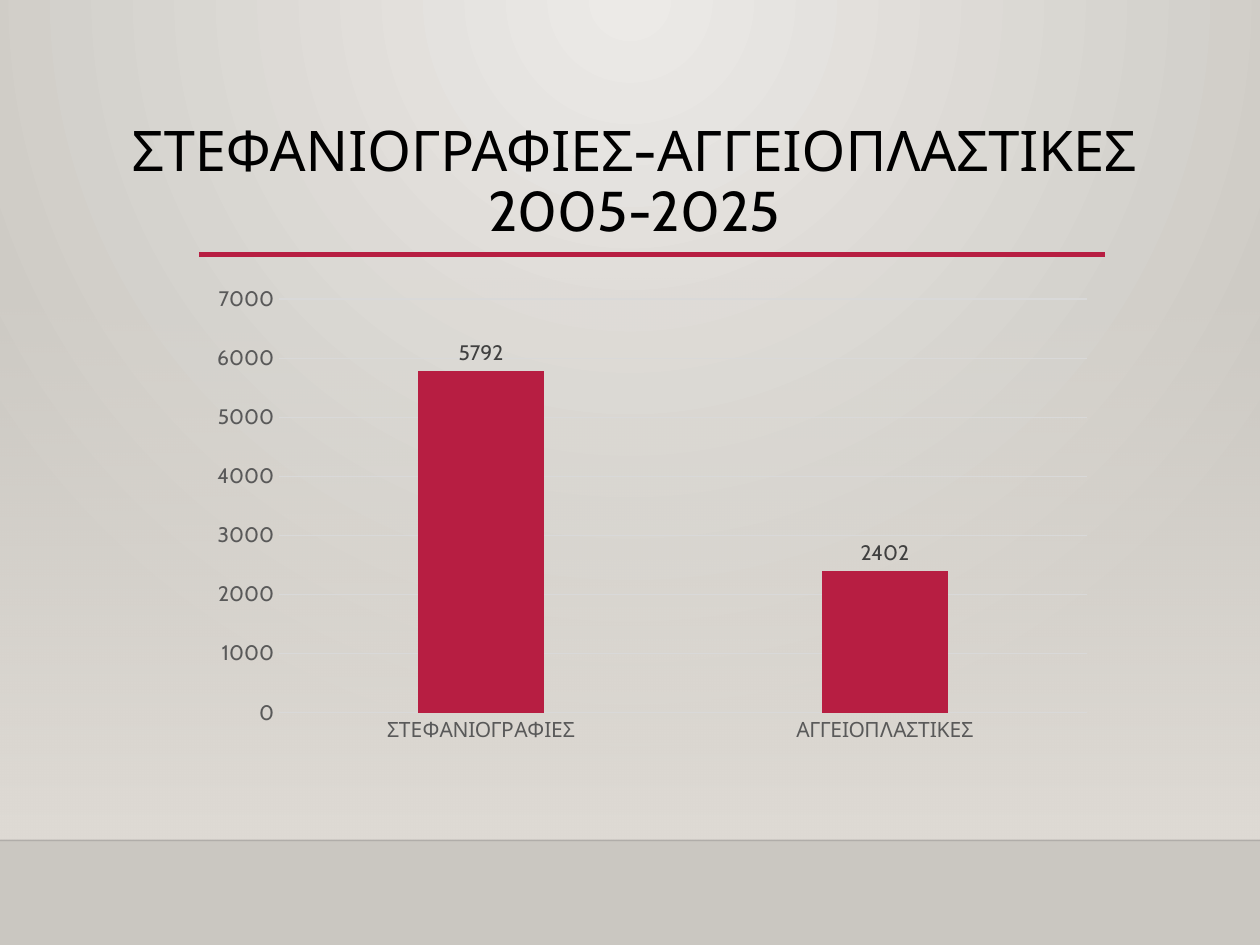
from dataclasses import dataclass
from typing import Optional

import lxml.etree
import pptx
import pptx.chart.data
import pptx.dml.color
import pptx.enum.chart
import pptx.enum.shapes
import pptx.enum.text
import pptx.oxml
import pptx.oxml.ns
import pptx.util

WIDTH, HEIGHT = 10, 7.5
FONT = "Cabin"
CRIMSON, GRID_GREY, AXIS_GREY, LABEL_GREY = "B71E42", "D9D9D9", "595959", "404040"
SAND = "DFDBD5"
# Shared layout: content column and the floor under the wall
LEFT, CONTENT_WIDTH = 1.58, 7.19
WALL_TOP, FLOOR_TOP, RULE_TOP = 2.2, 6.67, 2.02


@dataclass
class Stop:
    position: int
    color: str
    opacity: int = 100


@dataclass
class Rule:
    left: float
    top: float
    width: float
    color: str
    weight: float
    opacity: Optional[int] = None


RULES = [
    Rule(0, FLOOR_TOP, WIDTH, "000001", 1, 20),
    Rule(LEFT, RULE_TOP, CONTENT_WIDTH, CRIMSON, 2.5),
]


def rgb(color: str) -> pptx.dml.color.RGBColor:
    return pptx.dml.color.RGBColor.from_string(color)


def box(*lengths: float) -> list:
    return [pptx.util.Inches(length) for length in lengths]


def add_child(parent, tag: str, **attributes: str):
    child = lxml.etree.SubElement(parent, pptx.oxml.ns.qn(tag))
    for name, value in attributes.items():
        child.set(name, value)
    return child


def set_gradient(fill, owner, stops: list[Stop]):
    """Fill with the given stops; return the gradient element for its direction."""
    fill.gradient()
    gradient = owner.find(".//" + pptx.oxml.ns.qn("a:gradFill"))
    for child in list(gradient):
        gradient.remove(child)
    stop_list = add_child(gradient, "a:gsLst")
    for stop in stops:
        entry = add_child(stop_list, "a:gs", pos=str(stop.position * 1000))
        color = add_child(entry, "a:srgbClr", val=stop.color)
        if stop.opacity < 100:
            add_child(color, "a:alpha", val=str(stop.opacity * 1000))
    return gradient


def set_font(font, size: float, color: str) -> None:
    font.name = FONT
    font.size = pptx.util.Pt(size)
    font.color.rgb = rgb(color)


def set_line(line, color: str, weight: float) -> None:
    line.color.rgb = rgb(color)
    line.width = pptx.util.Pt(weight)


def draw_background(slide) -> None:
    radial = set_gradient(slide.background.fill, slide.element,
                          [Stop(0, "ECEAE7"), Stop(100, "CAC7C1")])
    circle = add_child(radial, "a:path", path="circle")
    add_child(circle, "a:fillToRect", l="43000", t="0", r="43000", b="100000")

    # Wall that fades in towards the floor
    wall = slide.shapes.add_shape(
        pptx.enum.shapes.MSO_SHAPE.RECTANGLE,
        *box(0, WALL_TOP, WIDTH, FLOOR_TOP - WALL_TOP))
    wall.shadow.inherit = False
    wall.line.fill.background()
    fade = set_gradient(wall.fill, wall.element, [Stop(0, SAND, 0), Stop(100, SAND)])
    add_child(fade, "a:lin", ang="5400000", scaled="0")


def draw_rule(slide, rule: Rule) -> None:
    connector = slide.shapes.add_connector(
        pptx.enum.shapes.MSO_CONNECTOR.STRAIGHT,
        *box(rule.left, rule.top, rule.left + rule.width, rule.top))
    set_line(connector.line, rule.color, rule.weight)
    if rule.opacity is not None:
        color = connector.element.spPr.find(".//" + pptx.oxml.ns.qn("a:srgbClr"))
        add_child(color, "a:alpha", val=str(rule.opacity * 1000))
    add_child(connector.element.spPr, "a:effectLst")


def draw_title(slide, text: str) -> None:
    frame = slide.shapes.add_textbox(*box(0.35, 0.88, 9.37, 1.15)).text_frame
    frame.word_wrap = True
    frame.vertical_anchor = pptx.enum.text.MSO_ANCHOR.MIDDLE
    paragraph = frame.paragraphs[0]
    paragraph.alignment = pptx.enum.text.PP_ALIGN.CENTER
    paragraph.line_spacing = 0.9
    run = paragraph.add_run()
    run.text = text
    set_font(run.font, 32, "000000")


def draw_chart(slide, counts: dict[str, int]) -> None:
    data = pptx.chart.data.CategoryChartData()
    data.categories = list(counts)
    data.add_series("Series 1", list(counts.values()))
    chart = slide.shapes.add_chart(
        pptx.enum.chart.XL_CHART_TYPE.COLUMN_CLUSTERED,
        *box(LEFT, WALL_TOP, CONTENT_WIDTH, 3.77), data).chart
    chart.has_title = False
    chart.has_legend = False
    set_font(chart.font, 10, "000000")

    # Axes and grid
    for axis in (chart.category_axis, chart.value_axis):
        axis.major_tick_mark = pptx.enum.chart.XL_TICK_MARK.NONE
        axis.minor_tick_mark = pptx.enum.chart.XL_TICK_MARK.NONE
        set_font(axis.tick_labels.font, 12, AXIS_GREY)
    set_line(chart.category_axis.format.line, GRID_GREY, 0.75)
    chart.value_axis.format.line.fill.background()
    chart.value_axis.has_major_gridlines = True
    set_line(chart.value_axis.major_gridlines.format.line, GRID_GREY, 0.75)

    # Columns and their values
    plot = chart.plots[0]
    plot.vary_by_categories = False
    plot.gap_width = 219
    plot.overlap = -27
    series = plot.series[0]
    series.format.fill.solid()
    series.format.fill.fore_color.rgb = rgb(CRIMSON)
    labels = series.data_labels
    labels.show_value = True
    labels.position = pptx.enum.chart.XL_LABEL_POSITION.OUTSIDE_END
    set_font(labels.font, 12, LABEL_GREY)


def main() -> None:
    presentation = pptx.Presentation()
    presentation.slide_width, presentation.slide_height = box(WIDTH, HEIGHT)
    slide = presentation.slides.add_slide(presentation.slide_layouts[6])
    draw_background(slide)
    for rule in RULES:
        draw_rule(slide, rule)
    draw_title(slide, "ΣΤΕΦΑΝΙΟΓΡΑΦΙΕΣ-ΑΓΓΕΙΟΠΛΑΣΤΙΚΕΣ 2005-2025")
    draw_chart(slide, {"ΣΤΕΦΑΝΙΟΓΡΑΦΙΕΣ": 5792, "ΑΓΓΕΙΟΠΛΑΣΤΙΚΕΣ": 2402})
    presentation.save("out.pptx")


if __name__ == "__main__":
    main()
